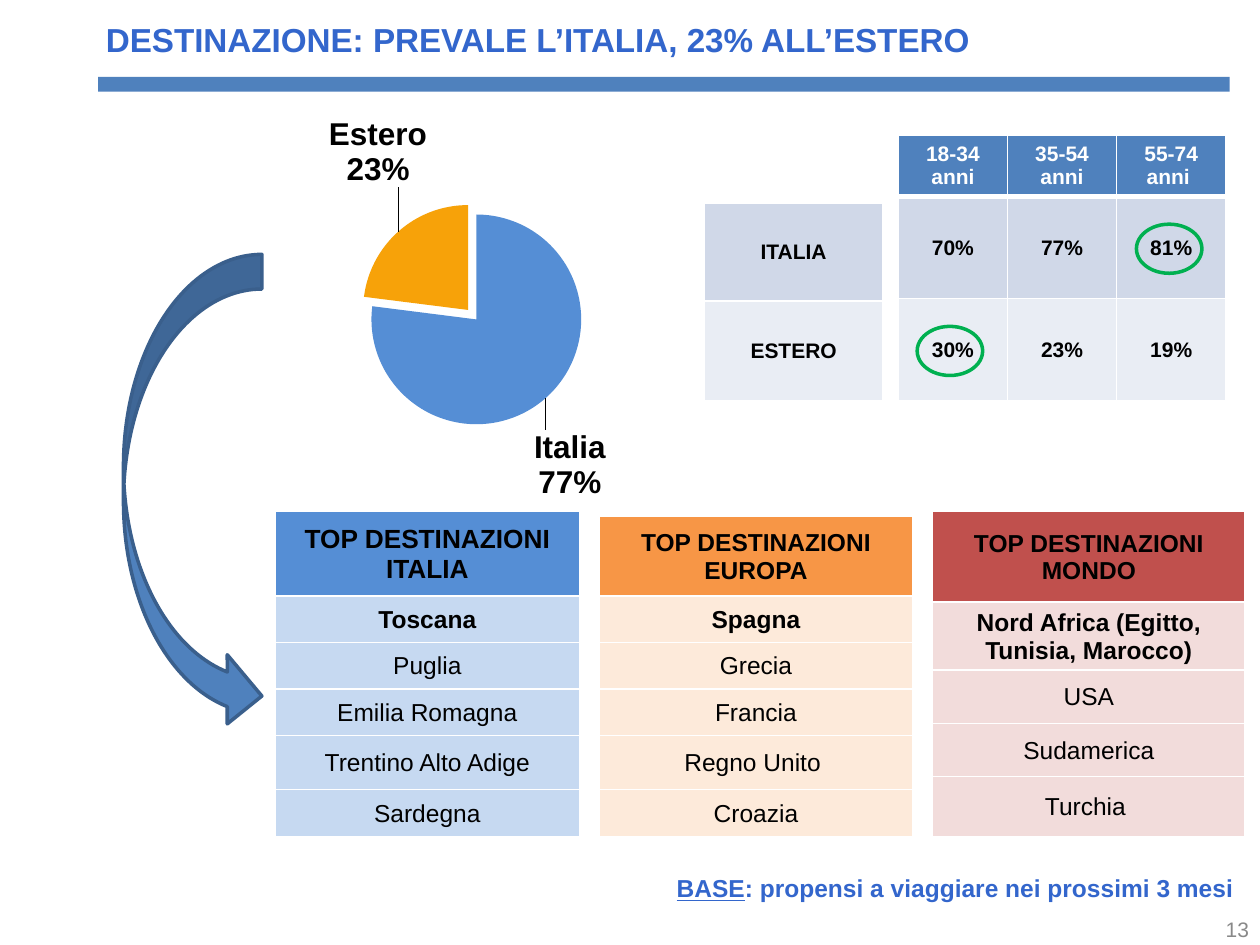
from dataclasses import dataclass

from lxml import etree
from pptx import Presentation
from pptx.chart.data import CategoryChartData
from pptx.dml.color import RGBColor
from pptx.enum.chart import XL_CHART_TYPE
from pptx.enum.shapes import MSO_SHAPE
from pptx.enum.text import MSO_ANCHOR, PP_ALIGN
from pptx.oxml import parse_xml
from pptx.oxml.ns import nsdecls, qn
from pptx.util import Cm, Pt

PIE = XL_CHART_TYPE.PIE
RECT, OVAL, ARROW = MSO_SHAPE.RECTANGLE, MSO_SHAPE.OVAL, MSO_SHAPE.CURVED_RIGHT_ARROW
LEFT, CENTER, RIGHT = PP_ALIGN.LEFT, PP_ALIGN.CENTER, PP_ALIGN.RIGHT
TOP, MIDDLE = MSO_ANCHOR.TOP, MSO_ANCHOR.MIDDLE
TITLE_ONLY = 5


@dataclass(frozen=True)
class Theme:
    font: str = "Arial"
    text: str = "000000"
    white: str = "FFFFFF"
    heading: str = "3366CC"
    muted: str = "898989"
    accent: str = "4F81BD"
    accent_edge: str = "3A5F8C"
    mark: str = "00B050"
    band_dark: str = "D0D8E8"
    band_light: str = "E9EDF4"
    italy: str = "558ED5"
    italy_tint: str = "C6D9F1"
    abroad: str = "F7A209"
    europe: str = "F79646"
    europe_tint: str = "FDEADA"
    world: str = "C0504D"
    world_tint: str = "F2DCDB"
    title_size: int = 19
    chart_size: int = 18
    head_size: int = 15
    list_size: int = 14
    small_size: int = 12


class SlideBuilder:
    def __init__(self, slide, theme):
        self.slide, self.theme = slide, theme

    def style(self, font, size, color, **extra):
        for key, value in {"name": self.theme.font, "size": Pt(size), **extra}.items():
            setattr(font, key, value)
        font.color.rgb = RGBColor.from_string(color)

    def put_text(self, frame, runs, align, size, color, **extra):
        """Fill the first paragraph with (text, underline) runs."""
        paragraph = frame.paragraphs[0]
        paragraph.alignment = align
        for text, underline in runs:
            run = paragraph.add_run()
            run.text = text
            self.style(run.font, size, color, underline=underline, **extra)

    def title(self, box, text):
        holder = self.slide.shapes.title
        holder.left, holder.top, holder.width, holder.height = map(Cm, box)
        holder.text_frame.vertical_anchor = MIDDLE
        self.put_text(holder.text_frame, [(text, False)], LEFT,
                      self.theme.title_size, self.theme.heading, bold=True)

    def label(self, box, runs, size, color, anchor=TOP, **extra):
        frame = self.slide.shapes.add_textbox(*map(Cm, box)).text_frame
        frame.word_wrap = True
        frame.vertical_anchor = anchor
        self.put_text(frame, runs, RIGHT, size, color, **extra)

    def shape(self, kind, box, fill=None, line=None):
        shape = self.slide.shapes.add_shape(kind, *map(Cm, box))
        shape.shadow.inherit = False
        if fill:
            shape.fill.solid()
            shape.fill.fore_color.rgb = RGBColor.from_string(fill)
        else:
            shape.fill.background()
        if line:
            shape.line.color.rgb = RGBColor.from_string(line)
            shape.line.width = Pt(2)
        else:
            shape.line.fill.background()

    def border(self, cell, bottom):
        properties = cell._tc.get_or_add_tcPr()
        for side, width in {"L": 1, "R": 1, "T": 1, "B": bottom}.items():
            edge = etree.SubElement(properties, qn(f"a:ln{side}"), w=str(Pt(width)))
            paint = etree.SubElement(edge, qn("a:solidFill"))
            etree.SubElement(paint, qn("a:srgbClr"), val=self.theme.white)

    def table(self, left, top, col_width, columns, rows):
        """Each row is (height, texts, fill, font format, cell format)."""
        height = sum(row[0] for row in rows)
        table = self.slide.shapes.add_table(
            len(rows), columns, Cm(left), Cm(top),
            Cm(col_width * columns), Cm(height)).table
        table.horz_banding = False
        for column in table.columns:
            column.width = Cm(col_width)
        for r, (row_height, texts, fill, font, layout) in enumerate(rows):
            table.rows[r].height = Cm(row_height)
            for c in range(columns):
                cell = table.cell(r, c)
                self.border(cell, layout["bottom"])
                cell.fill.solid()
                cell.fill.fore_color.rgb = RGBColor.from_string(fill)
                cell.vertical_anchor = MIDDLE
                if layout["tight"]:
                    for side in ("left", "right", "top"):
                        setattr(cell, f"margin_{side}", Cm(0.03))
                    cell.margin_bottom = 0
                if c < len(texts):
                    self.put_text(cell.text_frame, [(texts[c], False)], CENTER, **font)
            if len(texts) == 1 < columns:
                table.cell(r, 0).merge(table.cell(r, columns - 1))

    def pie(self, box, slices):
        """Each slice is (name, share, colour, explosion, label shift x, y)."""
        data = CategoryChartData(number_format="0%")
        data.categories = [piece[0] for piece in slices]
        data.add_series("Series 1", [piece[1] for piece in slices])
        chart = self.slide.shapes.add_chart(PIE, *map(Cm, box), data).chart
        chart.has_legend = chart.has_title = False
        self.style(chart.font, self.theme.chart_size, self.theme.text, bold=True)
        plot = chart.plots[0]
        plot.vary_by_categories = True
        series = plot.series[0]
        shows = "".join(f'<c:show{part} val="{value}"/>' for part, value in {
            "LegendKey": 0, "Val": 1, "CatName": 1, "SerName": 0,
            "Percent": 0, "BubbleSize": 0}.items())
        shows = f'<c:dLblPos val="outEnd"/>{shows}<c:separator>\n</c:separator>'
        labels = ""
        for i, (_, _, color, explosion, dx, dy) in enumerate(slices):
            point = series.points[i]
            point.format.fill.solid()
            point.format.fill.fore_color.rgb = RGBColor.from_string(color)
            push = parse_xml(f'<c:explosion {nsdecls("c")} val="{explosion}"/>')
            series._element.findall(qn("c:dPt"))[i].find(qn("c:spPr")).addprevious(push)
            labels += (f'<c:dLbl><c:idx val="{i}"/><c:layout><c:manualLayout>'
                       f'<c:x val="{dx}"/><c:y val="{dy}"/></c:manualLayout></c:layout>'
                       f'{shows}</c:dLbl>')
        # Slice size follows the series explosion, labels get leader lines
        series._element.find(qn("c:dPt")).addprevious(
            parse_xml(f'<c:explosion {nsdecls("c")} val="25"/>'))
        series._element.find(qn("c:cat")).addprevious(parse_xml(
            f'<c:dLbls {nsdecls("c")}>{labels}<c:numFmt formatCode="0%" sourceLinked="0"/>'
            f'{shows}<c:showLeaderLines val="1"/></c:dLbls>'))
        area = chart._chartSpace.chart.plotArea
        for old in area.findall(qn("c:layout")):
            area.remove(old)
        area.insert(0, parse_xml(
            f'<c:layout {nsdecls("c")}><c:manualLayout><c:layoutTarget val="inner"/>'
            '<c:xMode val="edge"/><c:yMode val="edge"/><c:x val="0.085"/><c:y val="0.175"/>'
            '<c:w val="0.644"/><c:h val="0.614"/></c:manualLayout></c:layout>'))


def main():
    theme = Theme()
    deck = Presentation()
    deck.slide_width, deck.slide_height = Cm(25.4), Cm(19.05)
    page = SlideBuilder(deck.slides.add_slide(deck.slide_layouts[TITLE_ONLY]), theme)

    # Heading and pie of destinations
    page.shape(RECT, (1.98, 1.55, 22.81, 0.3), theme.accent)
    page.title((1.88, 0.25, 22.94, 1.07), "DESTINAZIONE: PREVALE L’ITALIA, 23% ALL’ESTERO")
    page.pie((2.77, 2.29, 16.79, 8.61), [
        ("Italia", 0.77, theme.italy, 0, -0.02, 0.06),
        ("Estero", 0.23, theme.abroad, 12, 0.04, -0.09)])

    # Destination by age group
    small = {"size": theme.small_size, "color": theme.text, "bold": True}
    tight = {"tight": True, "bottom": 1}
    header = {"tight": False, "bottom": 3}
    page.table(14.2, 2.72, 1.2, 3, [
        (1.35, [], theme.white, small, header),
        (2, ["ITALIA"], theme.band_dark, small, tight),
        (2, ["ESTERO"], theme.band_light, small, tight)])
    page.table(18.11, 2.72, 2.2, 3, [
        (1.24, ["18-34 anni", "35-54 anni", "55-74 anni "], theme.accent,
         {**small, "color": theme.white}, header),
        (2.06, ["70%", "77%", "81%"], theme.band_dark, small, tight),
        (2.06, ["30%", "23%", "19%"], theme.band_light, small, tight)])
    for left, top in ((22.91, 4.52), (18.49, 6.58)):
        page.shape(OVAL, (left, top, 1.32, 0.99), line=theme.mark)

    # Top destinations: heading and first place in bold
    page.shape(ARROW, (2.49, 5.13, 2.79, 9.6), theme.accent, theme.accent_edge)
    rankings = [
        (5.54, 10.31, 6.15, theme.italy, theme.italy_tint, theme.head_size,
         [("TOP DESTINAZIONI ITALIA", 1.7), ("Toscana", 0.94), ("Puglia", 0.94),
          ("Emilia Romagna", 0.94), ("Trentino Alto Adige", 1.09), ("Sardegna", 0.94)]),
        (12.09, 10.41, 6.3, theme.europe, theme.europe_tint, theme.list_size,
         [("TOP DESTINAZIONI EUROPA", 1.6), ("Spagna", 0.94), ("Grecia", 0.94),
          ("Francia", 0.94), ("Regno Unito ", 1.09), ("Croazia", 0.94)]),
        (18.8, 10.31, 6.3, theme.world, theme.world_tint, theme.list_size,
         [("TOP DESTINAZIONI MONDO", 1.83), ("Nord Africa (Egitto, Tunisia, Marocco)", 1.37),
          ("USA", 1.07), ("Sudamerica", 1.07), ("Turchia ", 1.22)])]
    for left, top, width, strong, tint, head_size, places in rankings:
        page.table(left, top, width, 1, [
            (height, [place], tint if rank else strong,
             {"size": theme.list_size if rank else head_size,
              "color": theme.text, "bold": rank < 2}, tight)
            for rank, (place, height) in enumerate(places)])

    # Survey base and page number
    page.label((11.91, 17.48, 13.21, 0.86),
               [("BASE", True), (": propensi a viaggiare nei prossimi 3 mesi", False)],
               theme.list_size, theme.heading, bold=True)
    page.label((19.51, 18.52, 5.92, 0.41), [("13", False)],
               theme.small_size, theme.muted, MIDDLE)
    deck.save("out.pptx")


if __name__ == "__main__":
    main()
